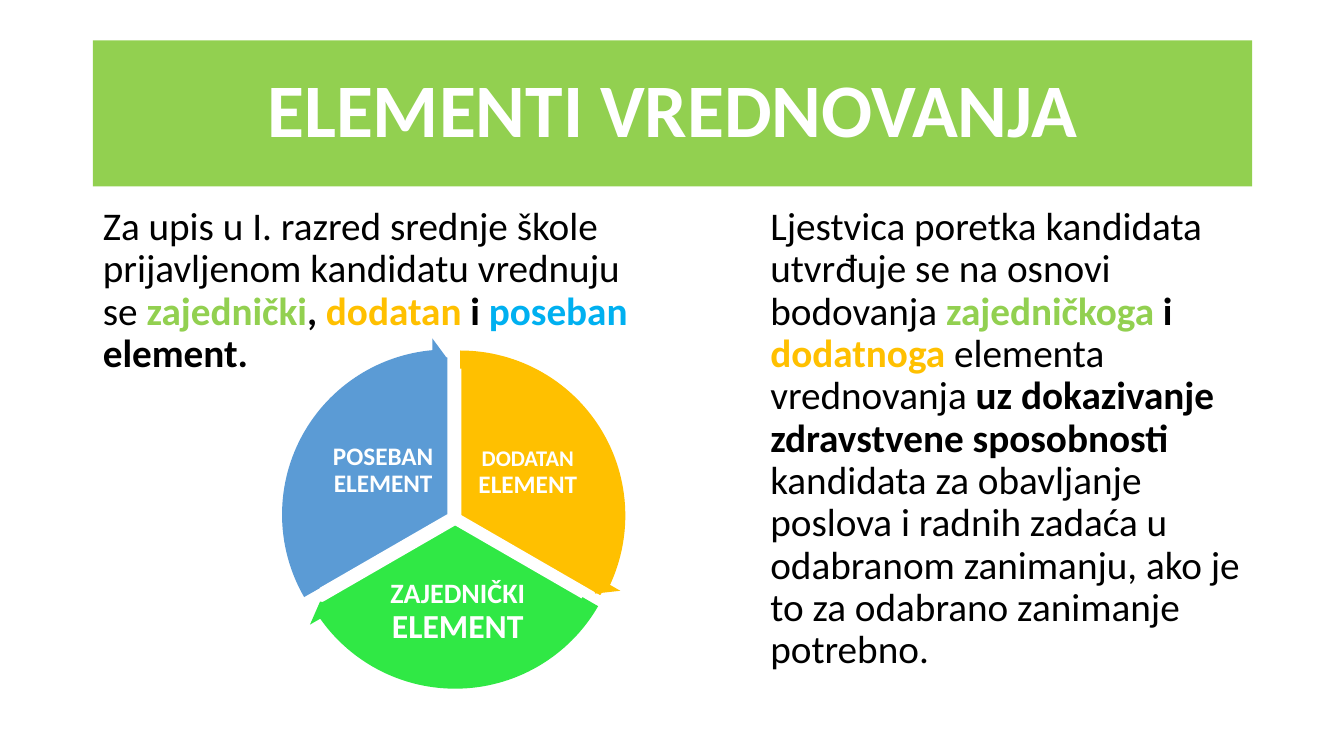
"""Build the slide on the elements of evaluation with a three-part cycle."""
from pptx import Presentation
from pptx.dml.color import RGBColor
from pptx.enum.shapes import MSO_SHAPE
from pptx.enum.text import MSO_ANCHOR, MSO_AUTO_SIZE, PP_ALIGN
from pptx.util import Pt

PX = 9144
PIE, ARROW = MSO_SHAPE.PIE, MSO_SHAPE.CIRCULAR_ARROW
CENTER, LEFT = PP_ALIGN.CENTER, PP_ALIGN.LEFT
TOP, MIDDLE = MSO_ANCHOR.TOP, MSO_ANCHOR.MIDDLE
NO_FIT = MSO_AUTO_SIZE.NONE
COLORS = {
    "white": "FFFFFF", "black": "000000", "lime": "92D050", "amber": "FFC000",
    "sky": "00B0F0", "green": "30E845", "blue": "5B9BD5",
}


def color(name):
    return RGBColor.from_string(COLORS[name])


def write(box, spans, align, anchor, before=0):
    frame = box.text_frame
    frame.word_wrap = True
    frame.auto_size = NO_FIT
    frame.vertical_anchor = anchor
    para = frame.paragraphs[0]
    para.alignment = align
    para.line_spacing = 0.9
    para.space_before = Pt(before)
    for text, size, tint, bold in spans:
        span = para.add_run()
        span.text = text
        span.font.name = "Calibri"
        span.font.size = Pt(size)
        span.font.bold = bold
        span.font.color.rgb = color(tint)
    return para


deck = Presentation()
deck.slide_width, deck.slide_height = 1333 * PX, 750 * PX
page = deck.slides.add_slide(deck.slide_layouts[3])
title, left_body, right_body = page.placeholders

title.left, title.top, title.width, title.height = [n * PX for n in (92, 40, 1150, 145)]
title.fill.solid()
title.fill.fore_color.rgb = color("lime")
write(title, [("ELEMENTI VREDNOVANJA", 54, "white", True)], CENTER, MIDDLE)

left_spans = [
    ("Za upis u I. razred srednje škole prijavljenom kandidatu vrednuju se ", 28, "black", False),
    ("zajednički", 28, "lime", True),
    (", ", 28, "black", True),
    ("dodatan", 28, "amber", True),
    (" i ", 28, "black", True),
    ("poseban", 28, "sky", True),
    (" element.", 28, "black", True),
]
right_spans = [
    ("Ljestvica poretka kandidata utvrđuje se na osnovi bodovanja ", 28, "black", False),
    ("zajedničkoga", 28, "lime", True),
    (" i ", 28, "black", True),
    ("dodatnoga ", 28, "amber", True),
    ("elementa vrednovanja ", 28, "black", False),
    ("uz dokazivanje zdravstvene sposobnosti ", 28, "black", True),
    ("kandidata za obavljanje poslova i radnih zadaća u odabranom zanimanju, "
     "ako je to za odabrano zanimanje potrebno.", 28, "black", False),
]
for body, left, width, spans in (
    (left_body, 92, 567, left_spans),
    (right_body, 754, 488, right_spans),
):
    body.left, body.top, body.width, body.height = [n * PX for n in (left, 200, width, 476)]
    para = write(body, spans, LEFT, TOP, before=10)
    properties = para._p.get_or_add_pPr()
    properties.set("marL", "0")
    properties.set("indent", "0")
    properties.append(properties.makeelement(
        "{http://schemas.openxmlformats.org/drawingml/2006/main}buNone", {}))

sectors = [
    ("amber", (296, 354, 322, 315), (162, 18), (466, 421, 115, 94), 2,
     [("DODATAN", 16, "white", True), (" ELEMENT", 18, "white", True)]),
    ("green", (295, 364, 313, 313), (18, 90), (370, 567, 168, 82), 3,
     [("ZAJEDNIČKI ", 20, "white", True), ("ELEMENT", 24, "white", True)]),
    ("blue", (288, 354, 313, 313), (90, 162), (324, 421, 112, 93), 3,
     [("POSEBAN ELEMENT", 18, "white", True)]),
]
arrows = [
    ("amber", (281, 336, 351, 351), (14.725, 161.994)),
    ("green", (276, 344, 351, 351), (86.72, 18.005)),
    ("blue", (268, 335, 351, 351), (158.73, 90)),
]
cycle = page.shapes.add_group_shape().shapes

for tint, place, angles, label_place, inset, spans in sectors:
    sector = cycle.add_shape(PIE, *[n * PX for n in place])
    sector.shadow.inherit = False
    sector.adjustments[0], sector.adjustments[1] = angles
    sector.fill.solid()
    sector.fill.fore_color.rgb = color(tint)
    sector.line.color.rgb = color("white")
    sector.line.width = Pt(1)
    label = cycle.add_textbox(*[n * PX for n in label_place])
    frame = label.text_frame
    frame.margin_left = frame.margin_right = inset * PX
    frame.margin_top = frame.margin_bottom = inset * PX
    write(label, spans, CENTER, MIDDLE)

for tint, place, angles in arrows:
    arrow = cycle.add_shape(ARROW, *[n * PX for n in place])
    arrow.shadow.inherit = False
    for index, value in enumerate((0.051, 3.275, *angles, 0.059)):
        arrow.adjustments[index] = value
    arrow.fill.solid()
    arrow.fill.fore_color.rgb = color(tint)
    arrow.line.fill.background()

deck.save("out.pptx")
